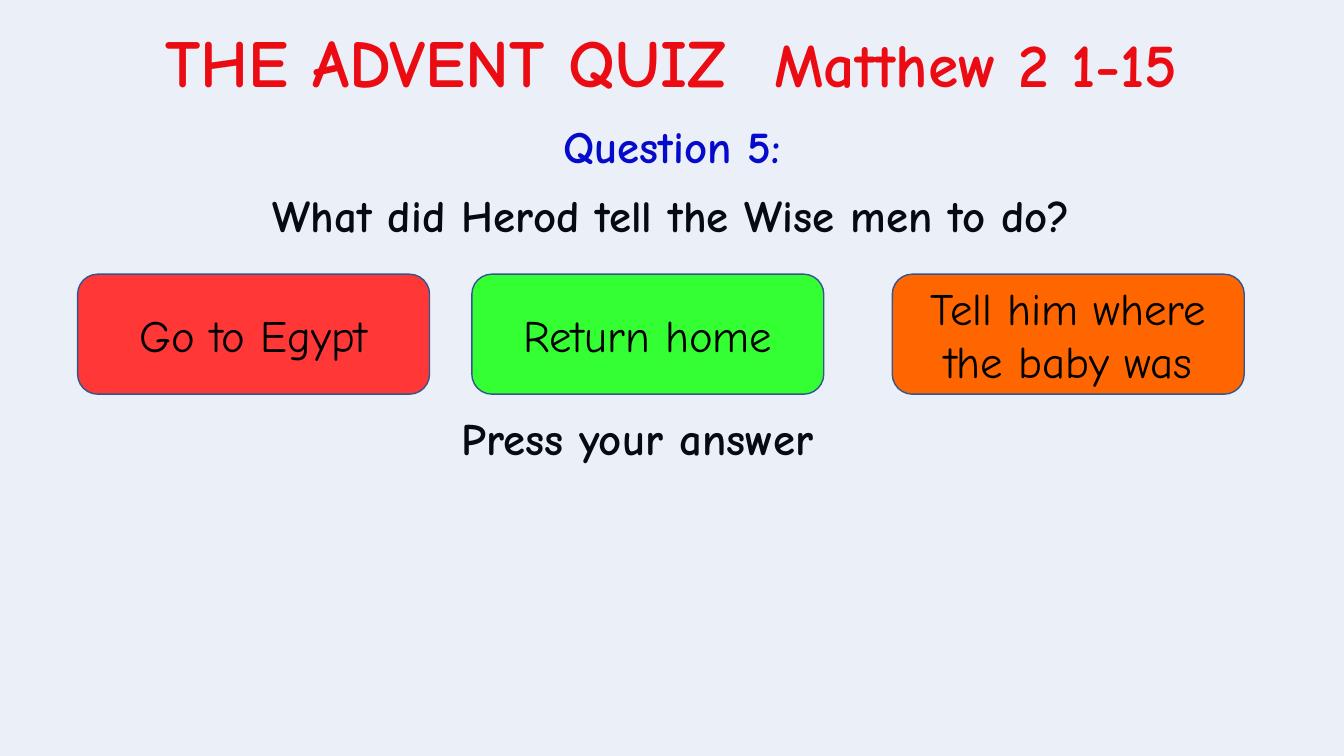
from lxml import etree
from pptx import Presentation
from pptx.dml.color import RGBColor
from pptx.enum.shapes import MSO_SHAPE
from pptx.enum.text import MSO_ANCHOR, MSO_AUTO_SIZE, PP_ALIGN
from pptx.oxml.ns import qn
from pptx.util import Inches, Pt

RECTANGLE = MSO_SHAPE.RECTANGLE
ROUNDED = MSO_SHAPE.ROUNDED_RECTANGLE
MIDDLE = MSO_ANCHOR.MIDDLE
GROW = MSO_AUTO_SIZE.SHAPE_TO_FIT_TEXT
LEFT, CENTER = PP_ALIGN.LEFT, PP_ALIGN.CENTER

RED = RGBColor(0xFF, 0x00, 0x00)
BLUE = RGBColor(0x00, 0x00, 0xCC)
BLACK = RGBColor(0x00, 0x00, 0x00)
TINT = RGBColor(0x44, 0x72, 0xC4)
BORDER = RGBColor(0x32, 0x54, 0x91)
ANSWER_RED = RGBColor(0xFF, 0x37, 0x37)
ANSWER_GREEN = RGBColor(0x33, 0xFF, 0x33)
ANSWER_ORANGE = RGBColor(0xFF, 0x66, 0x00)


class QuizSlide:
    font_name = "Comic Neue"
    text_size = 32

    def __init__(self, slide):
        self.slide = slide

    def add_run(self, paragraph, text, color=BLACK, size=text_size, bold=True):
        run = paragraph.add_run()
        run.text = text
        run.font.name = self.font_name
        run.font.size = Pt(size)
        run.font.bold = bold
        run.font.color.rgb = color

    def text_box(self, left, top, width, height, align=CENTER, wrap=True, grow=False):
        """Add a text box and return its first paragraph."""
        box = self.slide.shapes.add_textbox(
            Inches(left), Inches(top), Inches(width), Inches(height))
        box.text_frame.word_wrap = wrap
        if grow:
            box.text_frame.auto_size = GROW
        paragraph = box.text_frame.paragraphs[0]
        paragraph.alignment = align
        return paragraph

    def panel(self, kind, left, top, width, height, color):
        shape = self.slide.shapes.add_shape(
            kind, Inches(left), Inches(top), Inches(width), Inches(height))
        shape.shadow.inherit = False
        shape.fill.solid()
        shape.fill.fore_color.rgb = color
        shape.line.color.rgb = BORDER
        shape.line.width = Pt(1)
        return shape

    def tint(self, left, top, width, height, color, opacity):
        """Lay a transparent panel over everything added so far."""
        shape = self.panel(RECTANGLE, left, top, width, height, color)
        fill_color = shape.fill._xPr.find(qn("a:solidFill"))[0]
        alpha = etree.SubElement(fill_color, qn("a:alpha"))
        alpha.set("val", str(opacity * 1000))

    def answer(self, left, text, color):
        button = self.panel(ROUNDED, left, 2.72, 3.49, 1.19, color)
        button.text_frame.word_wrap = True
        button.text_frame.vertical_anchor = MIDDLE
        paragraph = button.text_frame.paragraphs[0]
        paragraph.alignment = CENTER
        self.add_run(paragraph, text, bold=False)


def main():
    presentation = Presentation()
    presentation.slide_width = Inches(13.33)
    presentation.slide_height = Inches(7.5)
    quiz = QuizSlide(presentation.slides.add_slide(presentation.slide_layouts[6]))

    title = quiz.text_box(0.37, 0.15, 12.58, 0.91, wrap=False, grow=True)
    quiz.add_run(title, "THE ADVENT QUIZ  ", RED, 48)
    quiz.add_run(title, "Matthew 2 1-15", RED, 44)

    question = quiz.text_box(1.26, 1.93, 10.81, 1.19)
    question.line_spacing = Pt(30)
    question.space_before = Pt(10)
    quiz.add_run(question, "What did Herod tell the Wise men to do?")

    prompt = quiz.text_box(4.48, 4.09, 6.73, 0.72, align=LEFT)
    prompt.line_spacing = 0.9
    prompt.space_before = Pt(7.5)
    quiz.add_run(prompt, "Press your answer")

    number = quiz.text_box(4.46, 1.13, 4.41, 0.64, grow=True)
    quiz.add_run(number, "Question 5:", BLUE)

    quiz.tint(-0.47, -0.61, 14.19, 8.73, TINT, opacity=10)

    answers = [
        (0.77, "Go to Egypt", ANSWER_RED),
        (4.68, "Return home", ANSWER_GREEN),
        (8.85, "Tell him where the baby was", ANSWER_ORANGE),
    ]
    for left, text, color in answers:
        quiz.answer(left, text, color)

    presentation.save("out.pptx")


if __name__ == "__main__":
    main()
